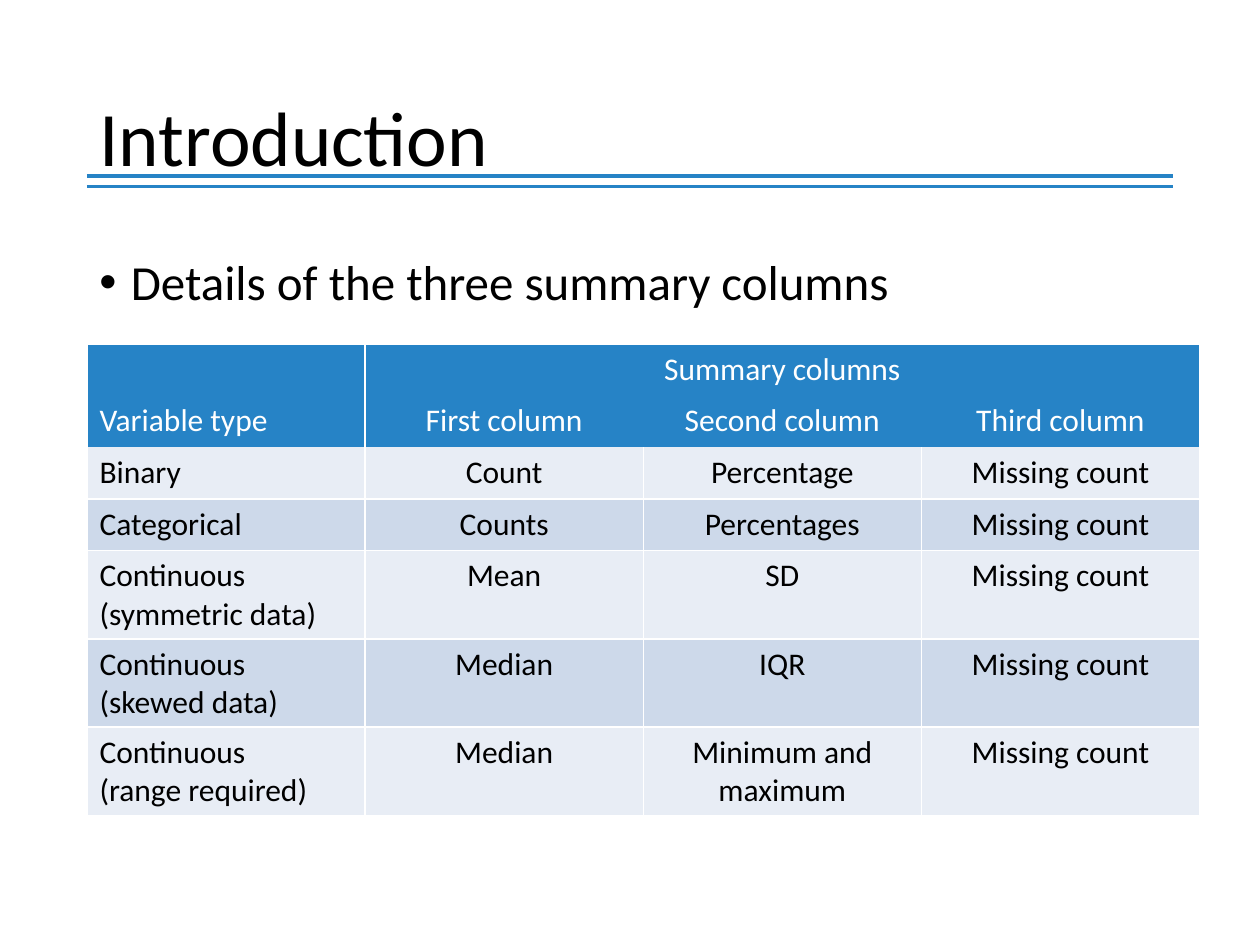
from lxml.etree import SubElement
from pptx import Presentation
from pptx.dml.color import RGBColor
from pptx.enum.text import MSO_ANCHOR, PP_ALIGN
from pptx.oxml.ns import qn
from pptx.util import Inches, Pt

BLUE = RGBColor(0x26, 0x83, 0xC6)
PALE = RGBColor(0xE8, 0xED, 0xF5)
MID = RGBColor(0xCD, 0xD9, 0xEA)
WHITE = RGBColor(0xFF, 0xFF, 0xFF)
BLACK = RGBColor(0, 0, 0)

# Content
TITLE = "Introduction"
BULLET = "Details of the three summary columns"
HEADER_ROWS = 2
ROWS = [
    ("", "Summary columns", "", ""),
    ("Variable type", "First column", "Second column", "Third column"),
    ("Binary", "Count", "Percentage", "Missing count"),
    ("Categorical", "Counts", "Percentages", "Missing count"),
    ("Continuous (symmetric data)", "Mean", "SD", "Missing count"),
    ("Continuous (skewed data)", "Median", "IQR", "Missing count"),
    ("Continuous\n(range required)", "Median", "Minimum and maximum", "Missing count"),
]

# Layout in inches
LEFT, CONTENT_WIDTH = 0.69, 8.62
RULE_TOPS = (1.4, 1.48)
TABLE_TOP, TABLE_WIDTH, ROW_HEIGHT = 2.73, 8.83, 0.41


def write(frame, text, size=18, color=BLACK, align=PP_ALIGN.LEFT,
          line_spacing=None, bullet=False):
    frame.word_wrap = True
    frame.text = text
    for paragraph in frame.paragraphs:
        if bullet:
            properties = paragraph._p.get_or_add_pPr()
            properties.set("marL", str(Inches(0.25)))
            properties.set("indent", str(-Inches(0.25)))
            SubElement(properties, qn("a:buFont"), typeface="Arial")
            SubElement(properties, qn("a:buChar"), char="•")
        paragraph.alignment = align
        if line_spacing:
            paragraph.line_spacing = line_spacing
        paragraph.font.size = Pt(size)
        for run in paragraph.runs:
            run.font.name = "Calibri"
            run.font.size = Pt(size)
            run.font.bold = False
            run.font.color.rgb = color


def set_borders(cell, visible):
    properties = cell._tc.get_or_add_tcPr()
    for side in "LRTB":
        line = SubElement(properties, qn(f"a:ln{side}"), w=str(Pt(1)))
        if side in visible:
            fill = SubElement(line, qn("a:solidFill"))
            SubElement(fill, qn("a:srgbClr"), val=str(WHITE))
        else:
            SubElement(line, qn("a:noFill"))


def visible_sides(row, column):
    """Header cells are framed as a block; body cells have a full grid."""
    if row >= HEADER_ROWS:
        return "LRB" if row == HEADER_ROWS else "LRTB"
    sides = "T" if row == 0 else ""
    if column <= 1:
        sides += "L"
    if column in (0, len(ROWS[0]) - 1) or (row, column) == (0, 1):
        sides += "R"
    return sides


def add_summary_table(slide):
    row_count, column_count = len(ROWS), len(ROWS[0])
    table = slide.shapes.add_table(
        row_count, column_count, Inches(LEFT), Inches(TABLE_TOP),
        Inches(TABLE_WIDTH), Inches(ROW_HEIGHT * row_count)).table
    table.first_row = table.horz_banding = False
    for column in table.columns:
        column.width = Inches(TABLE_WIDTH / column_count)
    table.cell(0, 1).merge(table.cell(0, column_count - 1))
    for r, texts in enumerate(ROWS):
        table.rows[r].height = Inches(ROW_HEIGHT)
        header = r < HEADER_ROWS
        for c, text in enumerate(texts):
            cell = table.cell(r, c)
            write(cell.text_frame, text, color=WHITE if header else BLACK,
                  align=PP_ALIGN.CENTER if c else PP_ALIGN.LEFT)
            set_borders(cell, visible_sides(r, c))
            cell.fill.solid()
            cell.fill.fore_color.rgb = BLUE if header else (PALE, MID)[r % 2]


def main():
    presentation = Presentation()
    presentation.slide_width, presentation.slide_height = Inches(10), Inches(7.5)
    slide = presentation.slides.add_slide(presentation.slide_layouts[5])

    # Double rule under the title
    for top in RULE_TOPS:
        rule = slide.shapes.add_connector(
            1, Inches(LEFT), Inches(top), Inches(LEFT + CONTENT_WIDTH), Inches(top))
        rule.line.color.rgb = BLUE
        rule.line.width = Pt(2.25)
        SubElement(rule._element.spPr, qn("a:effectLst"))

    # Title
    title = slide.shapes.title
    title.left, title.top = Inches(LEFT), Inches(0.4)
    title.width, title.height = Inches(CONTENT_WIDTH), Inches(1.45)
    title.text_frame.vertical_anchor = MSO_ANCHOR.MIDDLE
    write(title.text_frame, TITLE, size=44, line_spacing=0.9)

    # Bullet and table
    body = slide.shapes.add_textbox(
        Inches(LEFT), Inches(2), Inches(CONTENT_WIDTH), Inches(4.76))
    write(body.text_frame, BULLET, size=28, line_spacing=0.9, bullet=True)
    add_summary_table(slide)

    presentation.save("out.pptx")


if __name__ == "__main__":
    main()
